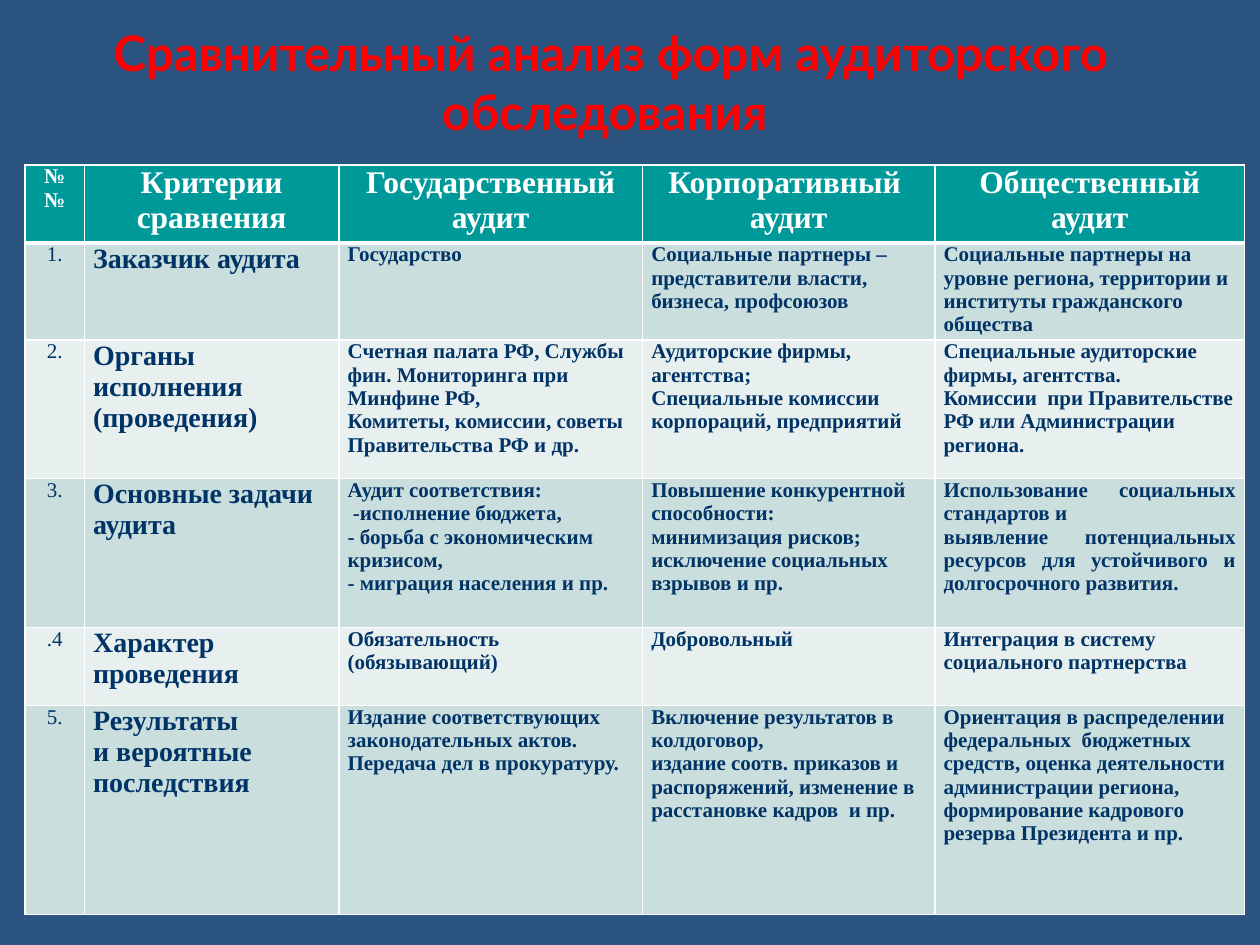
from dataclasses import dataclass

from lxml.etree import SubElement
from pptx import Presentation
from pptx.dml.color import RGBColor as RGB
from pptx.enum.text import MSO_ANCHOR as ANCHOR, PP_ALIGN as ALIGN
from pptx.oxml.ns import qn
from pptx.util import Inches, Pt


@dataclass(frozen=True)
class Theme:
    background: str = "2B5481"
    title: str = "FF0000"
    header_fill: str = "009999"
    bands: tuple = ("CBDEDE", "E7EFEF")
    white: str = "FFFFFF"
    text: str = "003366"
    title_font: str = "Lato"
    table_font: str = "Times New Roman"
    title_size: int = 28
    header_size: int = 18
    criterion_size: int = 16
    body_size: int = 12


THEME = Theme()
TITLE = " Сравнительный анализ форм аудиторского обследования"
COLUMNS = [0.47, 2.02, 2.41, 2.32, 2.46]
HEIGHTS = [0.62, 0.77, 1.1, 1.18, 0.62, 1.66]
# A line end inside a cell starts a new paragraph
ROWS = [
    ["№№", "Критерии сравнения", "Государственный\nаудит",
     "Корпоративный  аудит", "Общественный аудит"],
    ["1.", "Заказчик аудита", "Государство",
     "Социальные партнеры – представители власти, бизнеса, профсоюзов",
     "Социальные партнеры на уровне региона, территории и институты "
     "гражданского общества"],
    ["2.", "Органы исполнения\n(проведения)",
     "Счетная палата РФ, Службы фин. Мониторинга при Минфине РФ,\n"
     "Комитеты, комиссии, советы Правительства РФ и др.",
     "Аудиторские фирмы, агентства;\n"
     "Специальные комиссии корпораций, предприятий",
     "Специальные аудиторские фирмы, агентства.\n"
     "Комиссии  при Правительстве РФ или Администрации региона."],
    ["3.", "Основные задачи аудита",
     "Аудит соответствия:\n -исполнение бюджета,\n"
     "- борьба с экономическим кризисом,\n- миграция населения и пр.",
     "Повышение конкурентной способности:\nминимизация рисков;\n"
     "исключение социальных взрывов и пр.",
     "Использование социальных стандартов и\n"
     "выявление потенциальных ресурсов для устойчивого и "
     "долгосрочного развития."],
    [".4", "Характер проведения", "Обязательность\n(обязывающий)",
     "Добровольный", "Интеграция в систему социального партнерства"],
    ["5.", "Результаты\nи вероятные последствия",
     "Издание соответствующих законодательных актов.\n"
     "Передача дел в прокуратуру.",
     "Включение результатов в колдоговор,\n"
     "издание соотв. приказов и распоряжений, изменение в расстановке "
     "кадров  и пр.",
     "Ориентация в распределении федеральных  бюджетных средств, оценка "
     "деятельности администрации региона, формирование кадрового резерва "
     "Президента и пр."],
]
JUSTIFIED_CELL = (3, 4)


def set_attrs(obj, values):
    for name, value in values.items():
        setattr(obj, name, value)


def write_text(tf, text, align, color, **font):
    tf.text = text
    for p in tf.paragraphs:
        p.alignment = align
        for r in p.runs:
            set_attrs(r.font, font)
            r.font.color.rgb = RGB.from_string(color)


def add_title(s):
    title = s.shapes.title
    set_attrs(title, dict(left=Inches(0.35), top=Inches(0.28),
                          width=Inches(8.9), height=Inches(1.18)))
    tf = title.text_frame
    # The deep bottom margin lifts the two lines above the table
    set_attrs(tf, dict(word_wrap=True, vertical_anchor=ANCHOR.MIDDLE,
                       margin_top=Inches(0.05), margin_bottom=Inches(0.5)))
    write_text(tf, TITLE, ALIGN.CENTER, THEME.title, name=THEME.title_font,
               size=Pt(THEME.title_size), bold=True)


def add_borders(cell, row):
    widths = dict(lnL=1, lnR=1, lnT=3 if row == 1 else 1, lnB=3 if row == 0 else 1)
    tc_pr = cell._tc.get_or_add_tcPr()
    for side, width in widths.items():
        line = SubElement(tc_pr, qn(f"a:{side}"), w=str(Pt(width)))
        fill = SubElement(line, qn("a:solidFill"))
        SubElement(fill, qn("a:srgbClr"), val=THEME.white)


def cell_format(row, col):
    """Return alignment, text colour, size and weight for a table position."""
    if row == 0:
        size = THEME.body_size if col == 0 else THEME.header_size
        return ALIGN.CENTER, THEME.white, size, True
    if col == 0:
        return ALIGN.CENTER, THEME.text, THEME.body_size, False
    align = ALIGN.JUSTIFY if (row, col) == JUSTIFIED_CELL else ALIGN.LEFT
    size = THEME.criterion_size if col == 1 else THEME.body_size
    return align, THEME.text, size, True


def fill_cell(cell, text, row, col):
    # The number column is a little tighter, so that its heading wraps
    side = Inches(0.08 if col == 0 else 0.07)
    set_attrs(cell, dict(margin_left=side, margin_right=side,
                         margin_top=0, margin_bottom=0))
    add_borders(cell, row)
    cell.fill.solid()
    color = THEME.bands[(row - 1) % 2] if row else THEME.header_fill
    cell.fill.fore_color.rgb = RGB.from_string(color)
    align, text_color, size, bold = cell_format(row, col)
    write_text(cell.text_frame, text, align, text_color,
               name=THEME.table_font, size=Pt(size), bold=bold)


def add_comparison_table(s):
    frame = s.shapes.add_table(len(ROWS), len(COLUMNS), Inches(0.2), Inches(1.31),
                               Inches(sum(COLUMNS)), Inches(sum(HEIGHTS)))
    table = frame.table
    set_attrs(table, dict(first_row=False, horz_banding=False))
    for column, width in zip(table.columns, COLUMNS):
        column.width = Inches(width)
    for row, height in zip(table.rows, HEIGHTS):
        row.height = Inches(height)
    for i, texts in enumerate(ROWS):
        for j, text in enumerate(texts):
            fill_cell(table.cell(i, j), text, i, j)


def main():
    prs = Presentation()
    set_attrs(prs, dict(slide_width=Inches(10), slide_height=Inches(7.5)))
    s = prs.slides.add_slide(prs.slide_layouts[5])

    # Background
    s.background.fill.solid()
    s.background.fill.fore_color.rgb = RGB.from_string(THEME.background)

    # Heading and comparison
    add_title(s)
    add_comparison_table(s)
    prs.save("out.pptx")


if __name__ == "__main__":
    main()
